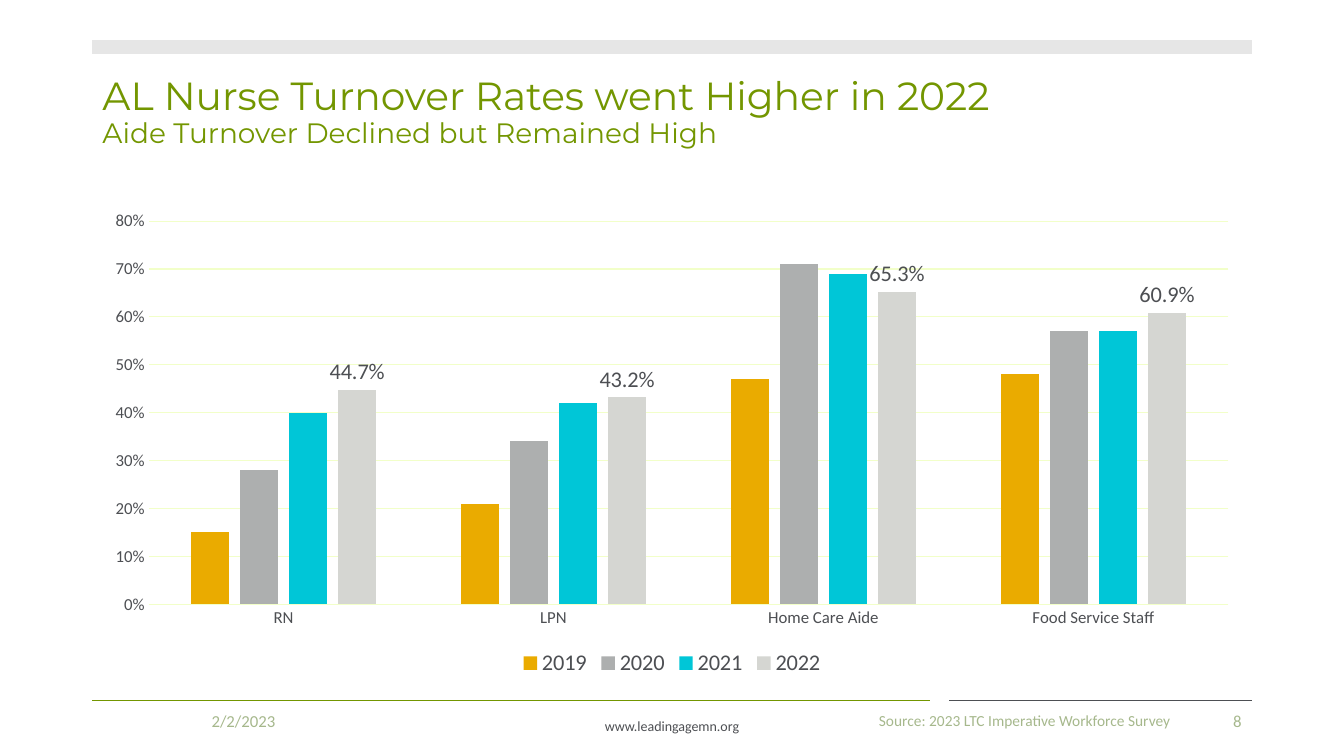
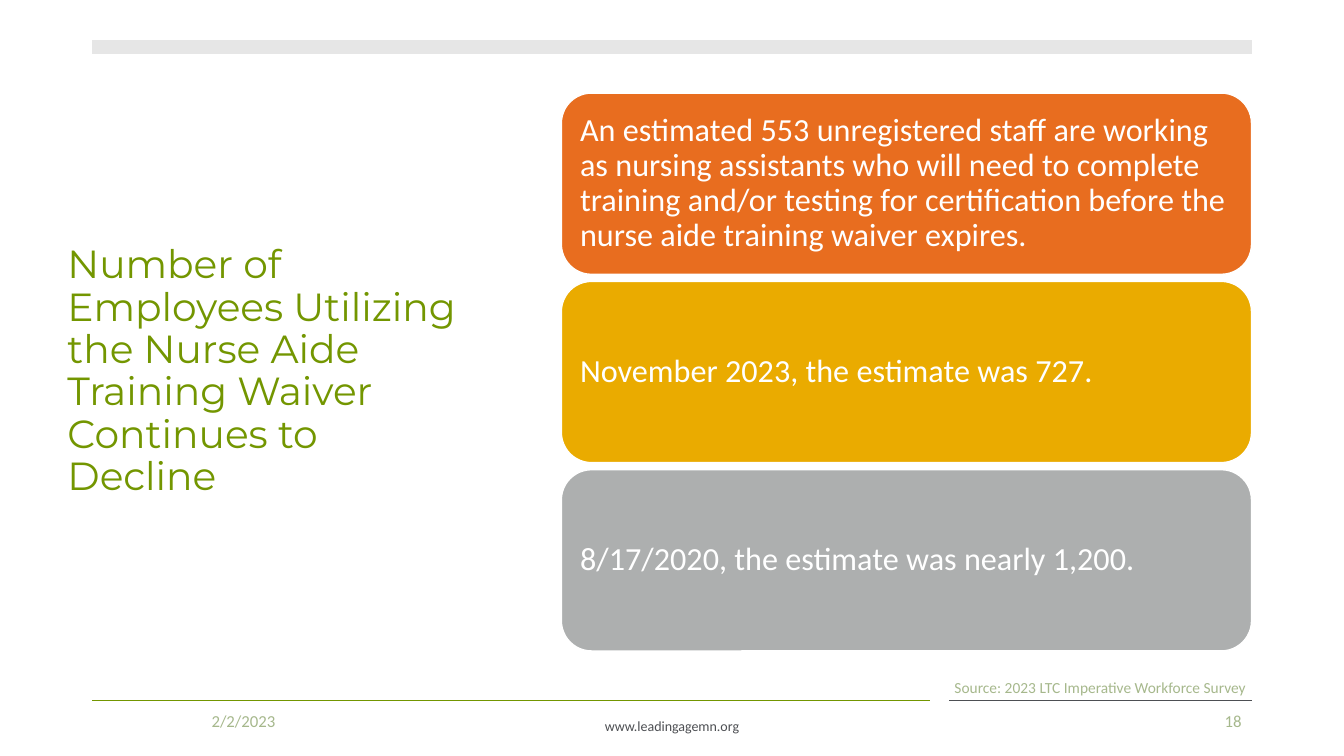
"""Build two workforce slides: a turnover chart and a stack of estimates."""
from lxml import etree
from pptx import Presentation
from pptx import util as u
from pptx.chart import data as chart_data
from pptx.dml import color
from pptx.enum import chart as chart_enum
from pptx.enum import shapes, text
from pptx.oxml import ns

COLORS = {
    "green": "739600",
    "dark": "4D4F53",
    "band": "E6E6E6",
    "sage": "A6B88C",
    "grid": "F2FFC9",
    "orange": "E86D1F",
    "gold": "EAAB00",
    "gray": "ADAFAF",
    "cyan": "00C6D7",
    "silver": "D5D6D2",
    "white": "FFFFFF",
}
BODY_FONT, TITLE_FONT = "Calibri", "Montserrat"
LEFT, RIGHT, FOOTER_TOP = 66, 894, 500.4
FOOTER_HEIGHT = 28.8
SOURCE = "Source: 2023 LTC Imperative Workforce Survey"
ALIGN = text.PP_ALIGN


def rgb(name):
    return color.RGBColor.from_string(COLORS[name])


def points(*values):
    return [u.Pt(value) for value in values]


def set_font(font, size, color_name, name=BODY_FONT):
    font.size = u.Pt(size)
    font.name = name
    font.bold = False
    font.color.rgb = rgb(color_name)


def set_line(line, color_name, width):
    line.color.rgb = rgb(color_name)
    line.width = u.Pt(width)


def add_rule(slide, start, end, top, color_name, width):
    rule = slide.shapes.add_connector(
        shapes.MSO_CONNECTOR.STRAIGHT, *points(start, top, end, top))
    set_line(rule.line, color_name, width)
    etree.SubElement(rule._element.spPr, ns.qn("a:effectLst"))


def add_label(slide, box, content, size, color_name="sage", align=ALIGN.CENTER,
              anchor=text.MSO_ANCHOR.MIDDLE):
    frame = slide.shapes.add_textbox(*points(*box)).text_frame
    frame.word_wrap = True
    frame.vertical_anchor = anchor
    paragraph = frame.paragraphs[0]
    paragraph.text = content
    paragraph.alignment = align
    set_font(paragraph.font, size, color_name)


def add_title(slide, box, heading, subtitle=None):
    title = slide.shapes.title
    title.left, title.top, title.width, title.height = points(*box)
    frame = title.text_frame
    frame.word_wrap = True
    frame.auto_size = text.MSO_AUTO_SIZE.NONE
    frame.vertical_anchor = text.MSO_ANCHOR.MIDDLE
    paragraph = frame.paragraphs[0]
    paragraph.alignment = ALIGN.LEFT
    paragraph.line_spacing = 0.9
    set_font(paragraph.font, 28, "green", TITLE_FONT)
    paragraph.add_run().text = heading
    if subtitle:
        paragraph.add_line_break()
        run = paragraph.add_run()
        run.text = subtitle
        run.font.size = u.Pt(20)


def add_frame(presentation, number):
    slide = presentation.slides.add_slide(presentation.slide_layouts[5])
    add_rule(slide, LEFT, 664, FOOTER_TOP, "green", 1)
    add_rule(slide, 678, RIGHT, FOOTER_TOP, "dark", 1)
    add_rule(slide, LEFT, RIGHT, 33.6, "band", 10)
    add_label(slide, (318, 509, 324, 20), "www.leadingagemn.org", 10, "dark",
              anchor=text.MSO_ANCHOR.TOP)
    add_label(slide, (LEFT, FOOTER_TOP, 216, FOOTER_HEIGHT), "2/2/2023", 12)
    add_label(slide, (678, FOOTER_TOP, 216, FOOTER_HEIGHT), str(number), 12,
              align=ALIGN.RIGHT)
    return slide


def add_source(slide, left, top):
    add_label(slide, (left, top, 324, FOOTER_HEIGHT), SOURCE, 11)


def style_axes(chart):
    category_axis, value_axis = chart.category_axis, chart.value_axis
    for axis in (category_axis, value_axis):
        axis.major_tick_mark = chart_enum.XL_TICK_MARK.NONE
        axis.minor_tick_mark = chart_enum.XL_TICK_MARK.NONE
        set_font(axis.tick_labels.font, 12, "dark")
    set_line(category_axis.format.line, "grid", 0.75)
    value_axis.format.line.fill.background()
    value_axis.has_major_gridlines = True
    set_line(value_axis.major_gridlines.format.line, "grid", 0.75)
    value_axis.minimum_scale, value_axis.maximum_scale = 0, 0.8
    value_axis.major_unit = 0.1
    value_axis.tick_labels.number_format = "0%"
    value_axis.tick_labels.number_format_is_linked = False


def add_turnover_chart(slide, box, categories, series_rows):
    data = chart_data.CategoryChartData(number_format="0%")
    data.categories = categories
    for name, _, values in series_rows:
        data.add_series(name, values)
    chart = slide.shapes.add_chart(
        chart_enum.XL_CHART_TYPE.COLUMN_CLUSTERED, *points(*box), data).chart
    set_font(chart.font, 10, "dark")
    chart.has_title = False
    chart.has_legend = True
    chart.legend.position = chart_enum.XL_LEGEND_POSITION.BOTTOM
    chart.legend.include_in_layout = False
    set_font(chart.legend.font, 16, "dark")
    style_axes(chart)
    plot = chart.plots[0]
    plot.vary_by_categories = False
    plot.gap_width, plot.overlap = 219, -27
    for series, (_, color_name, _) in zip(plot.series, series_rows):
        series.format.fill.solid()
        series.format.fill.fore_color.rgb = rgb(color_name)
    labels = plot.series[-1].data_labels
    labels.show_value = True
    labels.number_format = "0.0%"
    labels.number_format_is_linked = False
    labels.position = chart_enum.XL_LABEL_POSITION.OUTSIDE_END
    set_font(labels.font, 16, "dark")


def add_estimate_cards(slide, box, cards, gap):
    left, top, width, height = box
    card_height = (height - gap * (len(cards) - 1)) / len(cards)
    for index, (color_name, content) in enumerate(cards):
        card_top = top + index * (card_height + gap)
        card = slide.shapes.add_shape(
            shapes.MSO_SHAPE.ROUNDED_RECTANGLE,
            *points(left, card_top, width, card_height))
        card.shadow.inherit = False
        card.fill.solid()
        card.fill.fore_color.rgb = rgb(color_name)
        set_line(card.line, "white", 1)
        frame = card.text_frame
        frame.word_wrap = True
        frame.vertical_anchor = text.MSO_ANCHOR.MIDDLE
        paragraph = frame.paragraphs[0]
        paragraph.text = content
        paragraph.alignment = ALIGN.LEFT
        paragraph.line_spacing = 0.9
        set_font(paragraph.font, 23, "white")


def build_turnover_slide(presentation):
    slide = add_frame(presentation, 8)
    add_title(slide, (LEFT, 29, 828, 104),
              "AL Nurse Turnover Rates went Higher in 2022",
              "Aide Turnover Declined but Remained High")
    add_turnover_chart(
        slide, (LEFT, 144, 828, 342.7),
        ("RN", "LPN", "Home Care Aide", "Food Service Staff"),
        (("2019", "gold", (0.15, 0.21, 0.47, 0.48)),
         ("2020", "gray", (0.28, 0.34, 0.71, 0.57)),
         ("2021", "cyan", (0.4, 0.42, 0.69, 0.57)),
         ("2022", "silver", (0.447, 0.432, 0.653, 0.609))))
    add_source(slide, 570, FOOTER_TOP)


def build_waiver_slide(presentation):
    slide = add_frame(presentation, 18)
    add_title(slide, (41, 49, 299.5, 433.4),
              "Number of Employees Utilizing the Nurse Aide Training Waiver "
              "Continues to Decline")
    add_estimate_cards(
        slide, (401, 66.5, 493, 398.5),
        (("orange", "An estimated 553 unregistered staff are working as "
          "nursing assistants who will need to complete training and/or "
          "testing for certification before the nurse aide training waiver "
          "expires."),
         ("gold", "November 2023, the estimate was 727."),
         ("gray", "8/17/2020, the estimate was nearly 1,200.")), 5)
    add_source(slide, 624, 476.6)


def main():
    presentation = Presentation()
    presentation.slide_width, presentation.slide_height = points(960, 540)
    build_turnover_slide(presentation)
    build_waiver_slide(presentation)
    presentation.save("out.pptx")


if __name__ == "__main__":
    main()
